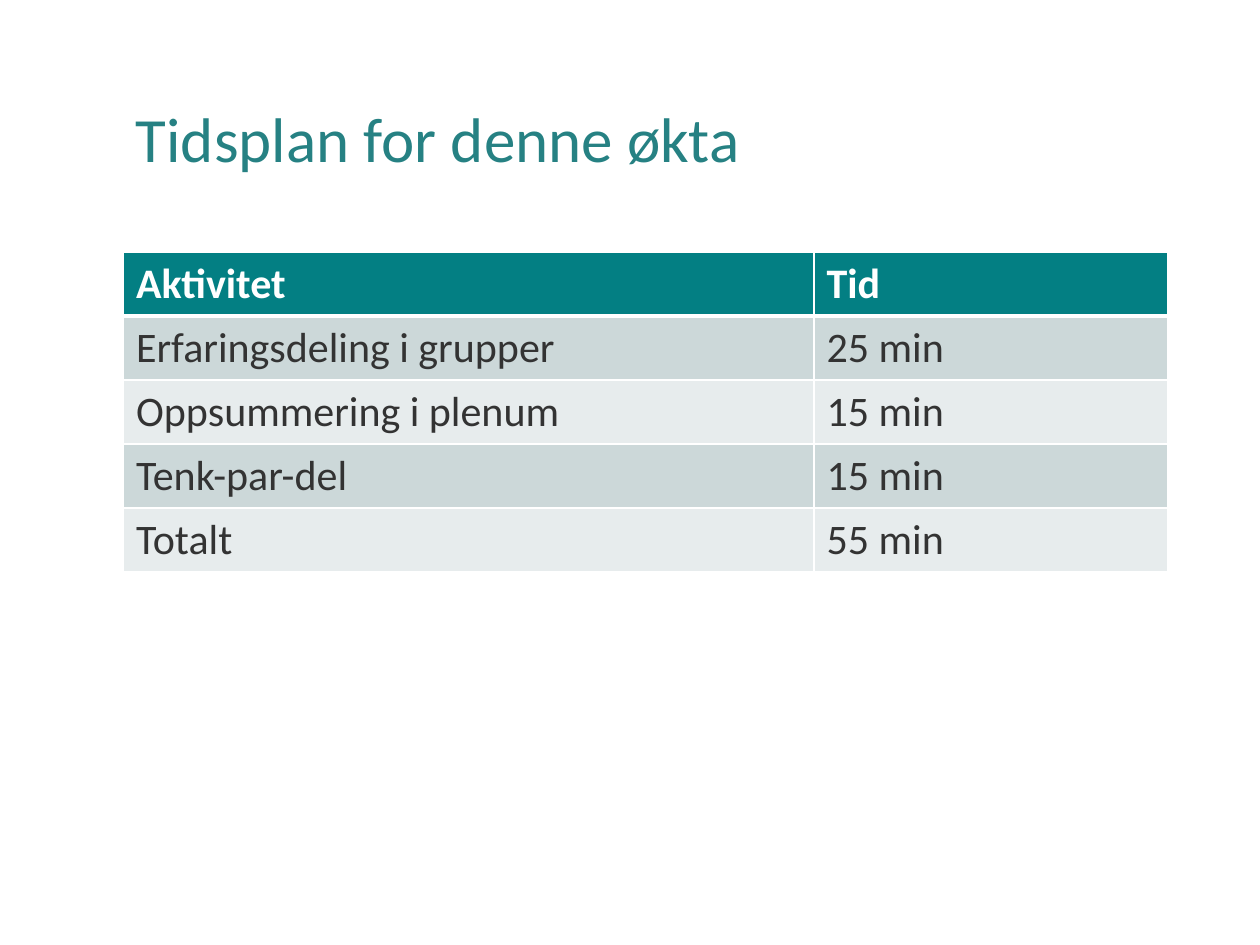
from typing import NamedTuple

from lxml import etree
from pptx import Presentation
from pptx.dml.color import RGBColor
from pptx.enum.text import MSO_ANCHOR
from pptx.oxml.ns import qn
from pptx.util import Cm, Pt

MIDDLE = MSO_ANCHOR.MIDDLE
FONT = "Calibri"
WHITE = RGBColor(0xFF, 0xFF, 0xFF)
TITLE_TEAL = RGBColor(0x26, 0x81, 0x83)
HEADER_TEAL = RGBColor(0x03, 0x7F, 0x83)
BODY_TEXT = RGBColor(0x33, 0x33, 0x33)
BANDS = (RGBColor(0xCC, 0xD8, 0xD9), RGBColor(0xE7, 0xEC, 0xED))

LEFT = Cm(2.49)
COLUMN_WIDTHS = (Cm(13.92), Cm(7.14))
WIDTH = sum(COLUMN_WIDTHS)
ROW_HEIGHT = Cm(1.29)
THIN = Pt(1)
THICK = Pt(3)


class Activity(NamedTuple):
    name: str
    time: str


HEADER = Activity("Aktivitet", "Tid")
ACTIVITIES = (
    Activity("Erfaringsdeling i grupper", "25 min"),
    Activity("Oppsummering i plenum", "15 min"),
    Activity("Tenk-par-del", "15 min"),
    Activity("Totalt", "55 min"),
)


def add_run(paragraph, text: str, size: int, color: RGBColor, bold: bool = False) -> None:
    run = paragraph.add_run()
    run.text = text
    run.font.name = FONT
    run.font.size = Pt(size)
    run.font.bold = bold
    run.font.color.rgb = color


def set_borders(cell, top: int, bottom: int) -> None:
    properties = cell._tc.get_or_add_tcPr()
    widths = {"a:lnL": THIN, "a:lnR": THIN, "a:lnT": top, "a:lnB": bottom}
    for position, (tag, width) in enumerate(widths.items()):
        line = etree.Element(qn(tag), w=str(int(width)))
        fill = etree.SubElement(line, qn("a:solidFill"))
        etree.SubElement(fill, qn("a:srgbClr"), val=str(WHITE))
        properties.insert(position, line)


def add_title(slide, text: str) -> None:
    shape = slide.shapes.add_textbox(LEFT, Cm(1.02), WIDTH, Cm(3.68))
    frame = shape.text_frame
    frame.word_wrap = True
    frame.vertical_anchor = MIDDLE
    paragraph = frame.paragraphs[0]
    paragraph.line_spacing = 0.9
    add_run(paragraph, text, 36, TITLE_TEAL)


def add_schedule(slide, rows: tuple[Activity, ...]) -> None:
    table = slide.shapes.add_table(
        len(rows), len(COLUMN_WIDTHS), LEFT, Cm(5.08), WIDTH, ROW_HEIGHT * len(rows)
    ).table
    for column, width in zip(table.columns, COLUMN_WIDTHS):
        column.width = width
    for row_index, activity in enumerate(rows):
        is_header = row_index == 0
        background = HEADER_TEAL if is_header else BANDS[(row_index - 1) % 2]
        color = WHITE if is_header else BODY_TEXT
        for column_index, text in enumerate(activity):
            cell = table.cell(row_index, column_index)
            cell.fill.solid()
            cell.fill.fore_color.rgb = background
            set_borders(
                cell,
                top=THICK if row_index == 1 else THIN,
                bottom=THICK if is_header else THIN,
            )
            add_run(cell.text_frame.paragraphs[0], text, 24, color, is_header)


def main() -> None:
    presentation = Presentation()
    presentation.slide_width = Cm(25.4)
    presentation.slide_height = Cm(19.05)
    slide = presentation.slides.add_slide(presentation.slide_layouts[6])
    add_title(slide, "Tidsplan for denne økta")
    add_schedule(slide, (HEADER, *ACTIVITIES))
    presentation.save("out.pptx")


if __name__ == "__main__":
    main()
